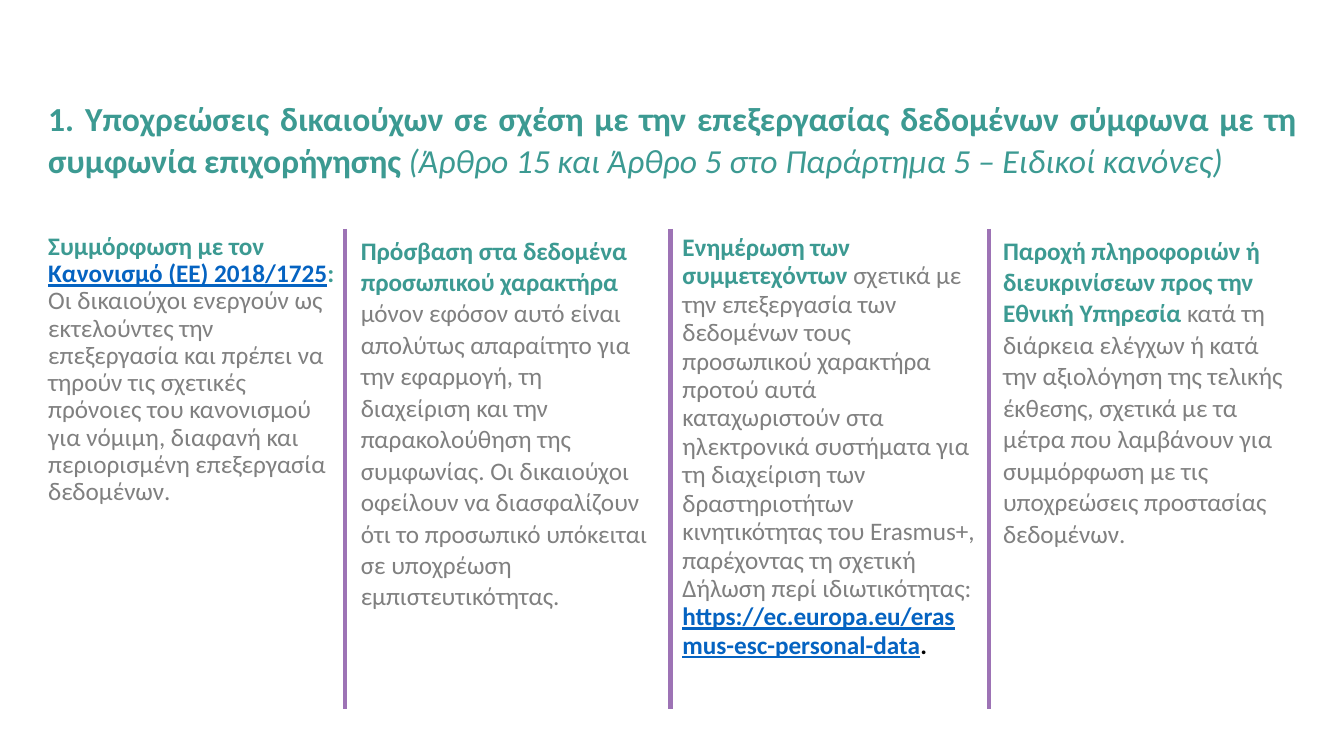
from lxml import etree
from pptx import Presentation
from pptx.dml.color import RGBColor
from pptx.enum.shapes import MSO_CONNECTOR
from pptx.enum.text import MSO_ANCHOR, PP_ALIGN
from pptx.oxml.ns import qn
from pptx.util import Inches, Pt

LINE = MSO_CONNECTOR.STRAIGHT
MIDDLE, TOP = MSO_ANCHOR.MIDDLE, MSO_ANCHOR.TOP
JUSTIFY, LEFT = PP_ALIGN.JUSTIFY, PP_ALIGN.LEFT
TEAL, GRAY, BLUE, BLACK, PURPLE = "3C9A92", "808080", "0563C1", "000000", "9D73B5"
HEAD, BODY, LINK, END, NOTE = (
    (TEAL, "b"), (GRAY, ""), (BLUE, "bu"), (BLACK, "b"), (TEAL, "i"))

TITLE = [
    ("1. Υποχρεώσεις δικαιούχων σε σχέση με την επεξεργασίας δεδομένων σύμφωνα με τη "
     "συμφωνία επιχορήγησης ", HEAD),
    ("(Άρθρο 15 και Άρθρο 5 στο Παράρτημα 5 – Ειδικοί κανόνες)", NOTE),
]
COLUMNS = [
    (0.38, 0.9, [
        ("Συμμόρφωση με τον ", HEAD),
        ("Κανονισμό (ΕΕ) 2018/1725", LINK),
        (": ", HEAD),
        ("Οι δικαιούχοι ενεργούν ως εκτελούντες την επεξεργασία και πρέπει να τηρούν τις "
         "σχετικές πρόνοιες του κανονισμού για νόμιμη, διαφανή και περιορισμένη "
         "επεξεργασία δεδομένων.", BODY)]),
    (3.48, 1.04, [
        ("Πρόσβαση στα δεδομένα προσωπικού χαρακτήρα ", HEAD),
        ("μόνον εφόσον αυτό είναι απολύτως απαραίτητο για την εφαρμογή, τη διαχείριση και "
         "την παρακολούθηση της συμφωνίας. Οι δικαιούχοι οφείλουν να διασφαλίζουν ότι το "
         "προσωπικό υπόκειται σε υποχρέωση εμπιστευτικότητας.", BODY)]),
    (6.67, 0.94, [
        ("Ενημέρωση των συμμετεχόντων ", HEAD),
        ("σχετικά με την επεξεργασία των δεδομένων τους προσωπικού χαρακτήρα προτού αυτά "
         "καταχωριστούν στα ηλεκτρονικά συστήματα για τη διαχείριση των δραστηριοτήτων "
         "κινητικότητας του Erasmus+, παρέχοντας τη σχετική Δήλωση περί ιδιωτικότητας: ", BODY),
        ("https://ec.europa.eu/erasmus-esc-personal-data", LINK),
        (".", END)]),
    (9.85, 1.04, [
        ("Παροχή πληροφοριών ή διευκρινίσεων προς την Εθνική Υπηρεσία ", HEAD),
        ("κατά τη διάρκεια ελέγχων ή κατά την αξιολόγηση της τελικής έκθεσης, σχετικά με τα "
         "μέτρα που λαμβάνουν για συμμόρφωση με τις υποχρεώσεις προστασίας δεδομένων.", BODY)]),
]
RULES = [3.42, 6.65, 9.81]


def color(code):
    return RGBColor.from_string(code)


def add_text(slide, box, runs, size, spacing, anchor=TOP, align=LEFT):
    frame = slide.shapes.add_textbox(*map(Inches, box)).text_frame
    frame.word_wrap = True
    frame.vertical_anchor = anchor
    para = frame.paragraphs[0]
    para.alignment = align
    para.line_spacing = spacing
    for text, (code, style) in runs:
        run = para.add_run()
        run.text = text
        font = run.font
        font.name = "Calibri"
        font.size = Pt(size)
        font.color.rgb = color(code)
        font.bold = "b" in style
        font.italic = "i" in style
        font.underline = "u" in style


def add_rule(slide, left, top, height):
    rule = slide.shapes.add_connector(
        LINE, Inches(left), Inches(top), Inches(left), Inches(top + height))
    rule.line.color.rgb = color(PURPLE)
    rule.line.width = Pt(3)
    etree.SubElement(rule._element.spPr, qn("a:effectLst"))


def add_title(slide, box):
    add_text(slide, box, TITLE, 24, 1.04, MIDDLE, JUSTIFY)


def add_columns(slide, top, width, height):
    for left, spacing, runs in COLUMNS:
        add_text(slide, (left, top, width, height), runs, 18, spacing)
    for left in RULES:
        add_rule(slide, left, top, height)


def main():
    deck = Presentation()
    deck.slide_width = Inches(13.33)
    deck.slide_height = Inches(7.5)
    slide = deck.slides.add_slide(deck.slide_layouts[6])
    add_title(slide, (0.38, 0.98, 12.58, 0.79))
    add_columns(slide, 2.27, 3.1, 4.76)
    deck.save("out.pptx")


if __name__ == "__main__":
    main()
